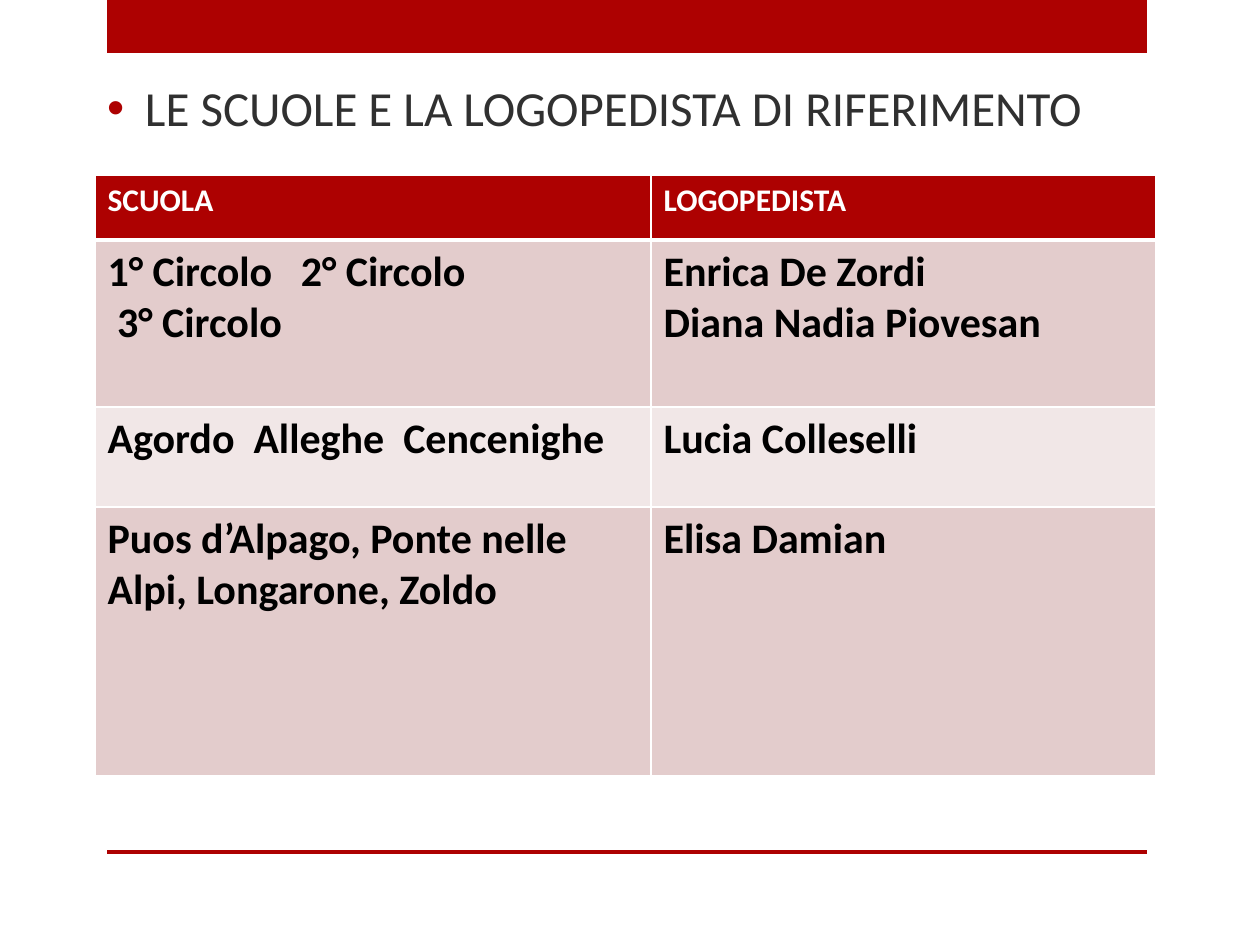
from lxml.etree import SubElement
from pptx import Presentation
from pptx.dml.color import RGBColor
from pptx.enum.shapes import MSO_SHAPE
from pptx.enum.text import MSO_ANCHOR, MSO_AUTO_SIZE, PP_ALIGN
from pptx.oxml import parse_xml
from pptx.oxml.ns import nsdecls, qn
from pptx.util import Emu, Inches, Pt

SCALE = Inches(1) / 126
THEME = {
    "font": "Calibri",
    "red": "AD0101",
    "title": "303030",
    "white": "FFFFFF",
    "black": "000000",
    "bands": ["E3CCCC", "F1E7E7"],
    "title_size": 28,
    "header_size": 18,
    "body_size": 24,
}


def px(*lengths):
    return [Emu(round(length * SCALE)) for length in lengths]


def write(frame, lines, size, color, bold):
    frame.text = "\n".join(lines)
    style = {"name": THEME["font"], "size": Pt(size), "bold": bold}
    for para in frame.paragraphs:
        for span in para.runs:
            for name, value in style.items():
                setattr(span.font, name, value)
            span.font.color.rgb = RGBColor.from_string(color)


deck = Presentation()
deck.slide_width, deck.slide_height = px(1260, 945)
page = deck.slides.add_slide(deck.slide_layouts[5])

for top, height in [(0, 53), (850, 4)]:
    bar = page.shapes.add_shape(MSO_SHAPE.RECTANGLE, *px(107, top, 1040, height))
    bar.shadow.inherit = False
    bar.fill.solid()
    bar.fill.fore_color.rgb = RGBColor.from_string(THEME["red"])
    bar.line.fill.background()

title = page.shapes.title
title.left, title.top, title.width, title.height = px(95, 66, 1040, 100)
frame = title.text_frame
write(frame, ["LE SCUOLE E LA LOGOPEDISTA DI RIFERIMENTO"],
      THEME["title_size"], THEME["title"], False)
inset_side, inset_top, indent = px(12, 12, 38)
frame_format = {
    "margin_left": inset_side,
    "margin_right": inset_side,
    "margin_top": inset_top,
    "vertical_anchor": MSO_ANCHOR.TOP,
    "auto_size": MSO_AUTO_SIZE.NONE,
    "word_wrap": True,
}
for name, value in frame_format.items():
    setattr(frame, name, value)
para = frame.paragraphs[0]
para.alignment = PP_ALIGN.LEFT
bullet = para._p.get_or_add_pPr()
bullet.set("marL", str(indent))
bullet.set("indent", str(-indent))
bullet_color = SubElement(bullet, qn("a:buClr"))
SubElement(bullet_color, qn("a:srgbClr")).set("val", THEME["red"])
SubElement(bullet, qn("a:buFont")).set("typeface", "Arial")
SubElement(bullet, qn("a:buChar")).set("char", "•")

schools = [
    (["SCUOLA"], ["LOGOPEDISTA"]),
    (["1° Circolo   2° Circolo", " 3° Circolo"],
     ["Enrica De Zordi", "Diana Nadia Piovesan"]),
    (["Agordo  Alleghe  Cencenighe"], ["Lucia Colleselli"]),
    (["Puos d’Alpago, Ponte nelle Alpi, Longarone, Zoldo"], ["Elisa Damian"]),
]
widths = px(556, 505)
heights = px(65, 167, 100, 269)
left, top = px(95, 175)
table = page.shapes.add_table(
    len(schools), len(widths), left, top, sum(widths), sum(heights)).table
for column, width in zip(table.columns, widths):
    column.width = width
for row, height in zip(table.rows, heights):
    row.height = height

for row_number, entries in enumerate(schools):
    is_header = row_number == 0
    fill = THEME["red"] if is_header else THEME["bands"][(row_number - 1) % 2]
    color = THEME["white"] if is_header else THEME["black"]
    size = THEME["header_size"] if is_header else THEME["body_size"]
    borders = {"lnL": 1, "lnR": 1, "lnT": 3 if row_number == 1 else 1,
               "lnB": 3 if is_header else 1}
    for column_number, lines in enumerate(entries):
        cell = table.cell(row_number, column_number)
        write(cell.text_frame, lines, size, color, True)
        cell.fill.solid()
        cell.fill.fore_color.rgb = RGBColor.from_string(fill)
        for position, (side, weight) in enumerate(borders.items()):
            cell._tc.get_or_add_tcPr().insert(position, parse_xml(
                f'<a:{side} {nsdecls("a")} w="{Pt(weight)}"><a:solidFill>'
                f'<a:srgbClr val="{THEME["white"]}"/></a:solidFill></a:{side}>'))

deck.save("out.pptx")
